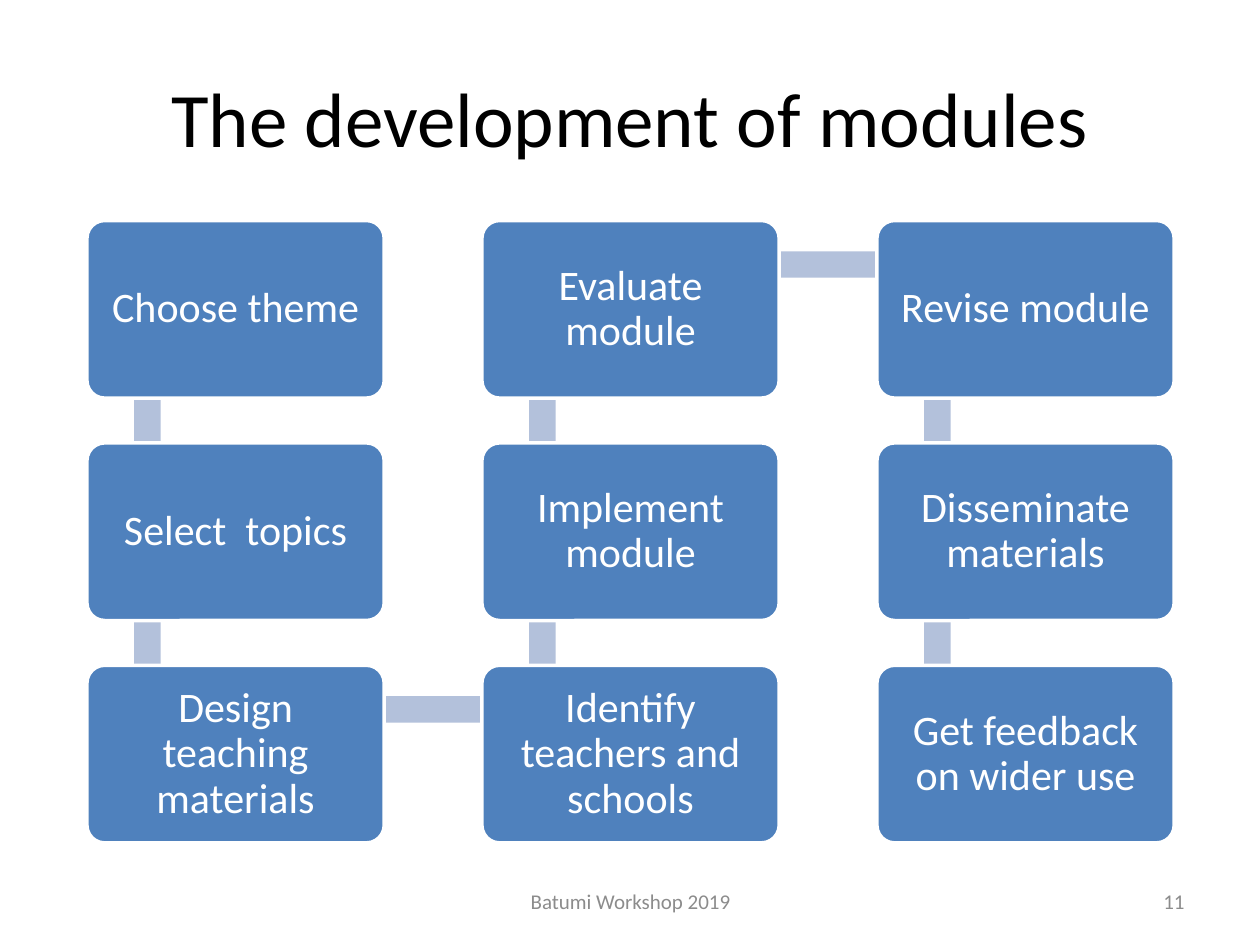
from dataclasses import dataclass
from itertools import pairwise

from pptx import Presentation
from pptx.dml.color import RGBColor as RGB
from pptx.enum.shapes import MSO_SHAPE as Kind
from pptx.enum.text import MSO_ANCHOR as Anchor, PP_ALIGN as Align
from pptx.util import Inches, Pt


@dataclass(frozen=True)
class Theme:
    font: str = "Calibri"
    box: RGB = RGB(0x4F, 0x81, 0xBD)
    bar: RGB = RGB(0xB3, 0xC1, 0xDB)
    white: RGB = RGB(0xFF, 0xFF, 0xFF)
    black: RGB = RGB(0, 0, 0)
    gray: RGB = RGB(0x8C, 0x8C, 0x8C)
    head: int = 44
    body: int = 24
    foot: int = 12


@dataclass(frozen=True)
class Grid:
    left: float = 0.69
    top: float = 1.75
    col: float = 3.135
    row: float = 1.765
    wide: float = 2.36
    high: float = 1.41
    inset: float = 0.48
    drop: float = 0.35
    thick: float = 0.21


@dataclass(frozen=True)
class Step:
    text: str
    col: int
    row: int

    @property
    def left(self) -> float:
        return GRID.left + self.col * GRID.col

    @property
    def top(self) -> float:
        return GRID.top + self.row * GRID.row


@dataclass(frozen=True)
class Label:
    text: str
    area: tuple[float, float, float, float]
    size: int
    color: RGB
    align: Align = Align.CENTER


THEME = Theme()
GRID = Grid()

STEPS = [
    Step("Choose theme", 0, 0),
    Step("Select  topics", 0, 1),
    Step("Design teaching materials", 0, 2),
    Step("Identify teachers and schools", 1, 2),
    Step("Implement module", 1, 1),
    Step("Evaluate module", 1, 0),
    Step("Revise module", 2, 0),
    Step("Disseminate materials", 2, 1),
    Step("Get feedback on wider use", 2, 2),
]

LABELS = [
    Label("The development of modules", (0.05, 0.04, 0.9, 0.167), THEME.head, THEME.black),
    Label("11", (0.717, 0.927, 0.233, 0.053), THEME.foot, THEME.gray, Align.RIGHT),
    Label("Batumi Workshop 2019", (0.342, 0.927, 0.317, 0.053), THEME.foot, THEME.gray),
]


def write(shape, text: str, size: int, color: RGB, align: Align) -> None:
    frame = shape.text_frame
    frame.text = text
    frame.word_wrap = True
    frame.vertical_anchor = Anchor.MIDDLE
    para = frame.paragraphs[0]
    para.alignment = align
    font = para.runs[0].font
    font.name, font.size = THEME.font, Pt(size)
    font.color.rgb = color


def block(slide, kind: Kind, area: tuple[float, ...], fill: RGB):
    shape = slide.shapes.add_shape(kind, *map(Inches, area))
    shape.shadow.inherit = False
    shape.fill.solid()
    shape.fill.fore_color.rgb = fill
    shape.line.fill.background()
    return shape


def draw_bar(slide, start: Step, end: Step) -> None:
    half = GRID.thick / 2
    left = min(start.left, end.left) + GRID.inset
    top = min(start.top, end.top) + GRID.drop
    if start.row == end.row:
        area = (left, top - half, GRID.col, GRID.thick)
    else:
        area = (left - half, top, GRID.thick, GRID.row)
    block(slide, Kind.RECTANGLE, area, THEME.bar)


def draw_step(slide, step: Step) -> None:
    area = (step.left, step.top, GRID.wide, GRID.high)
    shape = block(slide, Kind.ROUNDED_RECTANGLE, area, THEME.box)
    shape.adjustments[0] = 0.1
    shape.line.color.rgb = THEME.white
    shape.line.width = Pt(2)
    write(shape, step.text, THEME.body, THEME.white, Align.CENTER)
    frame = shape.text_frame
    frame.margin_left = frame.margin_right = Inches(0.1)
    frame.margin_top = frame.margin_bottom = Inches(0.1)
    frame.paragraphs[0].line_spacing = 0.9


def draw_label(slide, label: Label, wide: int, high: int) -> None:
    x, y, w, h = label.area
    box = slide.shapes.add_textbox(
        int(x * wide), int(y * high), int(w * wide), int(h * high)
    )
    write(box, label.text, label.size, label.color, label.align)


def main() -> None:
    deck = Presentation()
    deck.slide_width, deck.slide_height = Inches(10), Inches(7.5)
    slide = deck.slides.add_slide(deck.slide_layouts[6])
    for start, end in pairwise(STEPS):
        draw_bar(slide, start, end)
    for step in STEPS:
        draw_step(slide, step)
    for label in LABELS:
        draw_label(slide, label, deck.slide_width, deck.slide_height)
    deck.save("out.pptx")


if __name__ == "__main__":
    main()
